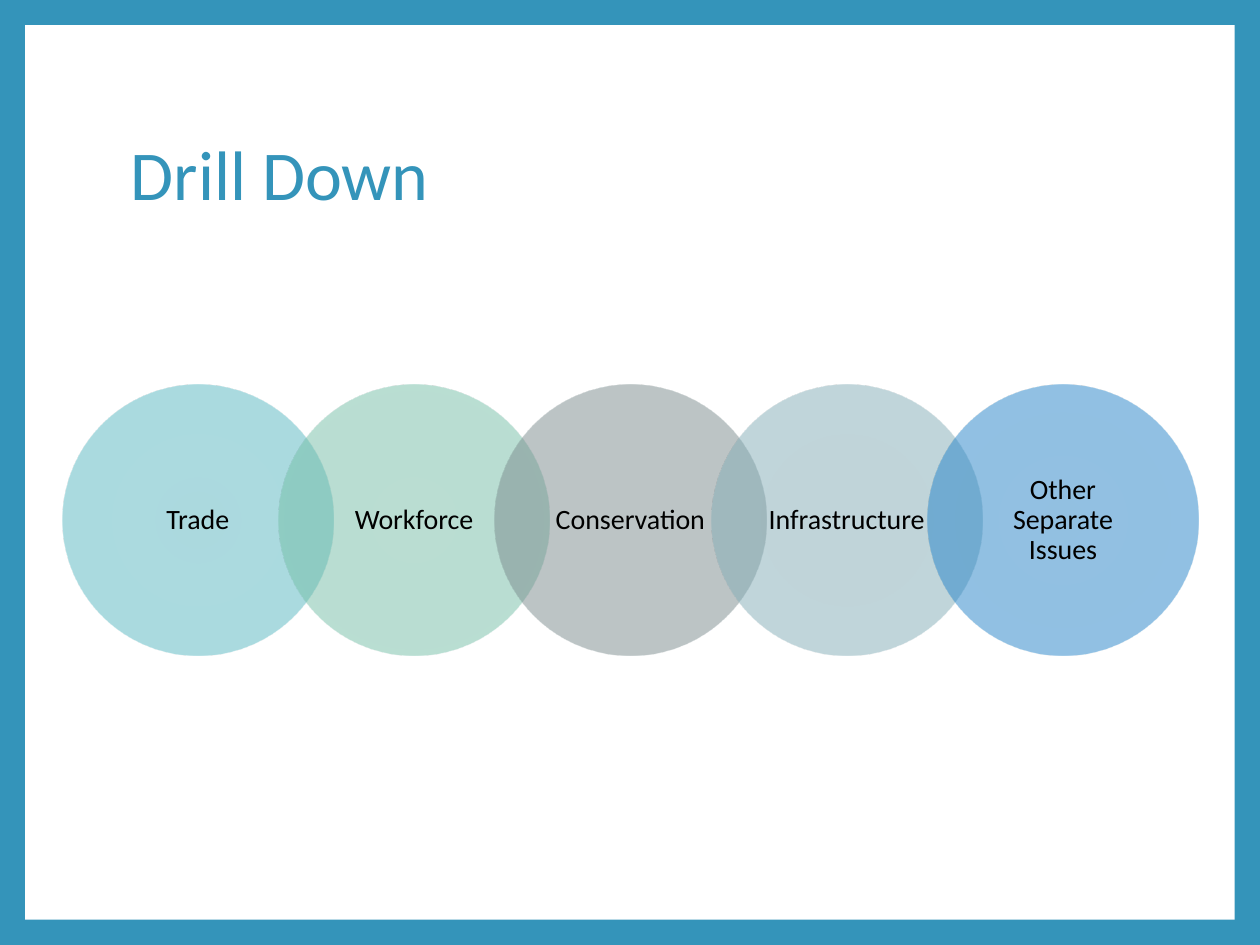
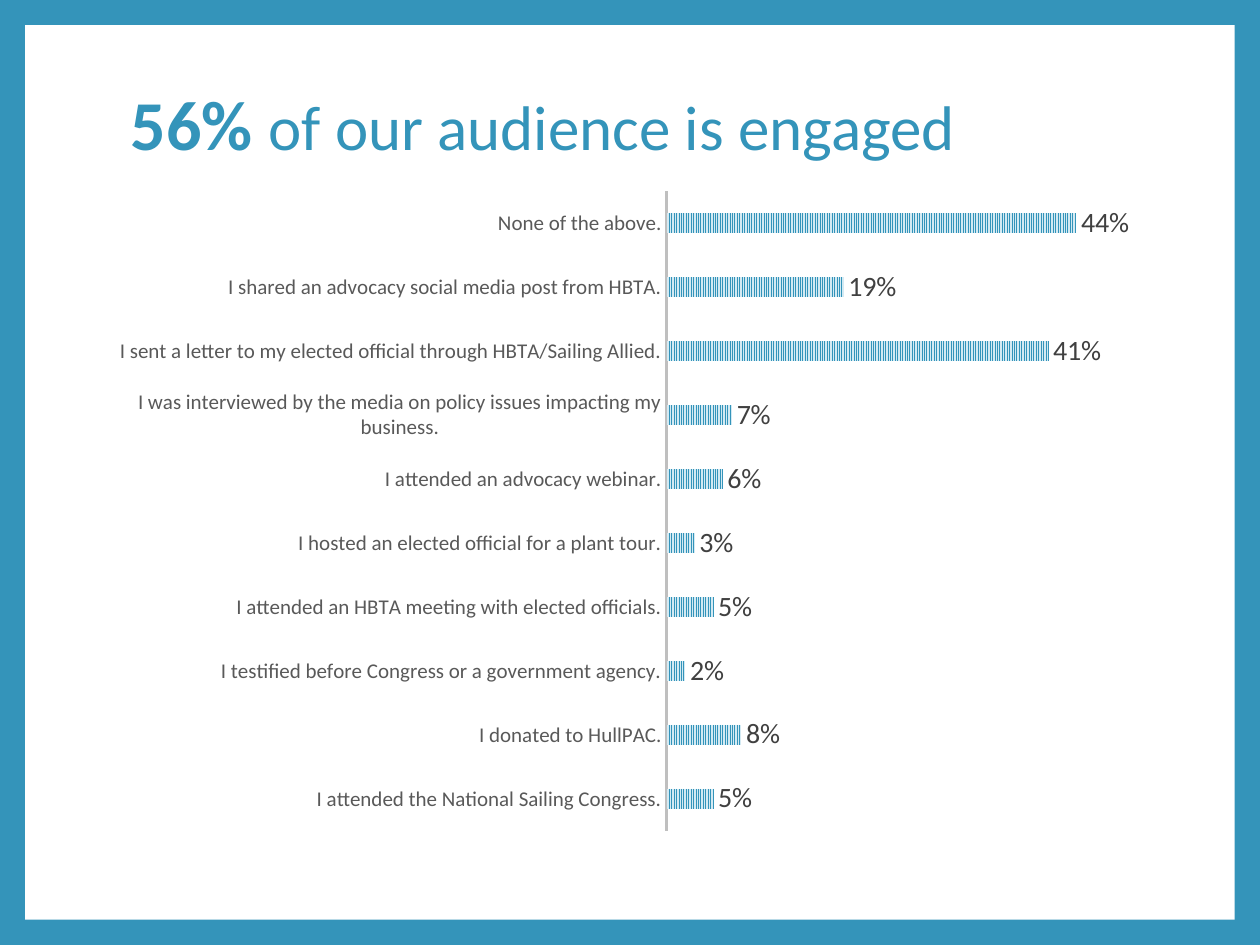
from pptx import Presentation
from pptx.chart.data import CategoryChartData
from pptx.dml.color import RGBColor
from pptx.enum.chart import XL_CHART_TYPE, XL_LABEL_POSITION, XL_TICK_MARK
from pptx.enum.dml import MSO_PATTERN
from pptx.enum.shapes import MSO_SHAPE
from pptx.enum.text import MSO_ANCHOR, PP_ALIGN
from pptx.oxml import parse_xml
from pptx.oxml.ns import nsdecls
from pptx.util import Cm, Pt

RECT = MSO_SHAPE.RECTANGLE
OVAL = MSO_SHAPE.OVAL
TOP = MSO_ANCHOR.TOP
MIDDLE = MSO_ANCHOR.MIDDLE
CENTER = PP_ALIGN.CENTER
BAR = XL_CHART_TYPE.BAR_CLUSTERED
OUT_END = XL_LABEL_POSITION.OUTSIDE_END
NO_TICK = XL_TICK_MARK.NONE
STRIPES = MSO_PATTERN.NARROW_VERTICAL

BLUE = "3494BA"
PALE = "D4EAF3"
WHITE = "FFFFFF"
BLACK = "000000"
WIDE, HIGH, EDGE = 25.4, 19.05, 0.51
LEFT, HEAD = 2.39, 1.7

ISSUES = [
    ("Trade", ("58B6C0", "55B8C3", "46ADB8")),
    ("Workforce", ("75BDA7", "73BFA8", "64B29A")),
    ("Conservation", ("7A8C8E", "7A8C8E", "6D8183")),
    ("Infrastructure", ("84ACB6", "83ADB7", "739FAA")),
    ("Other Separate Issues", ("2683C6", "2284CA", "1479C2")),
]
ACTIONS = [
    ("I attended the National Sailing Congress.", 0.05),
    ("I donated to HullPAC.", 0.08),
    ("I testified before Congress or a government agency.", 0.02),
    ("I attended an HBTA meeting with elected officials.", 0.05),
    ("I hosted an elected official for a plant tour.", 0.03),
    ("I attended an advocacy webinar.", 0.06),
    ("I was interviewed by the media on policy issues impacting my business.", 0.07),
    ("I sent a letter to my elected official through HBTA/Sailing Allied.", 0.41),
    ("I shared an advocacy social media post from HBTA.", 0.19),
    ("None of the above.", 0.44),
]


def color(code):
    return RGBColor.from_string(code)


class Deck:
    face = "Calibri"

    def __init__(self):
        self.show = Presentation()
        self.show.slide_width = Cm(WIDE)
        self.show.slide_height = Cm(HIGH)
        self.slide = None

    def page(self):
        self.slide = self.show.slides.add_slide(self.show.slide_layouts[6])
        fill = self.slide.background.fill
        fill.solid()
        fill.fore_color.rgb = color(BLUE)
        panel = self.shape(RECT, EDGE, EDGE, WIDE - 2 * EDGE, HIGH - 2 * EDGE)
        panel.fill.solid()
        panel.fill.fore_color.rgb = color(WHITE)

    def shape(self, kind, x, y, w, h):
        item = self.slide.shapes.add_shape(kind, Cm(x), Cm(y), Cm(w), Cm(h))
        item.shadow.inherit = False
        item.line.fill.background()
        return item

    def font(self, font, size, tint):
        font.name = self.face
        font.size = Pt(size)
        font.color.rgb = color(tint)

    def title(self, parts, height, anchor):
        box = self.slide.shapes.add_textbox(Cm(LEFT), Cm(HEAD), Cm(20.57), Cm(height))
        frame = box.text_frame
        frame.word_wrap = True
        frame.vertical_anchor = anchor
        line = frame.paragraphs[0]
        line.line_spacing = 0.9
        self.font(line.font, 40, BLUE)
        for text, size, bold in parts:
            run = line.add_run()
            run.text = text
            run.font.size = Pt(size)
            run.font.bold = bold

    def circle(self, x, y, size, text, tints):
        item = self.shape(OVAL, x, y, size, size)
        item.fill.background()
        stops = "".join(
            f'<a:gs pos="{pos}000"><a:srgbClr val="{tint}"><a:alpha val="50000"/></a:srgbClr></a:gs>'
            for pos, tint in zip((0, 90, 100), tints)
        )
        blend = parse_xml(
            f'<a:gradFill {nsdecls("a")} rotWithShape="1"><a:gsLst>{stops}</a:gsLst>'
            '<a:path path="circle"><a:fillToRect l="100000" t="100000" r="100000" b="100000"/>'
            "</a:path></a:gradFill>"
        )
        props = item._element.spPr
        props.replace(props.find("{*}noFill"), blend)
        frame = item.text_frame
        frame.word_wrap = True
        frame.vertical_anchor = MIDDLE
        frame.margin_left = frame.margin_right = Cm(0.3)
        frame.margin_top = frame.margin_bottom = Cm(0.05)
        line = frame.paragraphs[0]
        line.text = text
        line.alignment = CENTER
        line.line_spacing = 0.9
        self.font(line.font, 16, BLACK)

    def bars(self, x, y, w, h, rows):
        data = CategoryChartData(number_format="0%")
        data.categories = [name for name, _ in rows]
        data.add_series("Series 1", [value for _, value in rows])
        chart = self.slide.shapes.add_chart(BAR, Cm(x), Cm(y), Cm(w), Cm(h), data).chart
        chart.has_legend = False
        chart.has_title = False
        self.font(chart.font, 16, BLACK)

        plot = chart.plots[0]
        plot.gap_width = 227
        plot.overlap = -48
        plot.vary_by_categories = False
        fill = plot.series[0].format.fill
        fill.patterned()
        fill.pattern = STRIPES
        fill.fore_color.rgb = color(BLUE)
        fill.back_color.rgb = color(PALE)

        plot.has_data_labels = True
        labels = plot.data_labels
        labels.show_value = True
        labels.position = OUT_END
        labels.number_format = "0%"
        labels.number_format_is_linked = False
        self.font(labels.font, 16, "404040")

        names = chart.category_axis
        names.major_tick_mark = names.minor_tick_mark = NO_TICK
        names.format.line.color.rgb = color("BFBFBF")
        names.format.line.width = Pt(1.5)
        self.font(names.tick_labels.font, 12, "595959")

        scale = chart.value_axis
        scale.visible = False
        scale.has_major_gridlines = False
        scale.minimum_scale = 0
        scale.maximum_scale = 0.5

        area = chart._chartSpace.chart.plotArea
        for old in area.findall("{*}layout"):
            area.remove(old)
        spots = {"x": 0.53, "y": 0.02, "w": 0.45, "h": 0.96}
        modes = "".join(f'<c:{key}Mode val="edge"/>' for key in "xy")
        sizes = "".join(f'<c:{key} val="{part}"/>' for key, part in spots.items())
        area.insert(0, parse_xml(
            f'<c:layout {nsdecls("c")}><c:manualLayout><c:layoutTarget val="inner"/>'
            f"{modes}{sizes}</c:manualLayout></c:layout>"
        ))


def main():
    deck = Deck()

    deck.page()
    deck.title([("Drill Down", 40, False)], 3.76, MIDDLE)
    for index, (name, tints) in enumerate(ISSUES):
        deck.circle(1.26 + 4.36 * index, 7.76, 5.46, name, tints)

    deck.page()
    deck.title([("56% ", 40, True), ("of our audience is engaged", 36, False)], 2.39, TOP)
    deck.bars(LEFT, 3.58, 20.85, 13.44, ACTIONS)

    deck.show.save("out.pptx")


if __name__ == "__main__":
    main()
